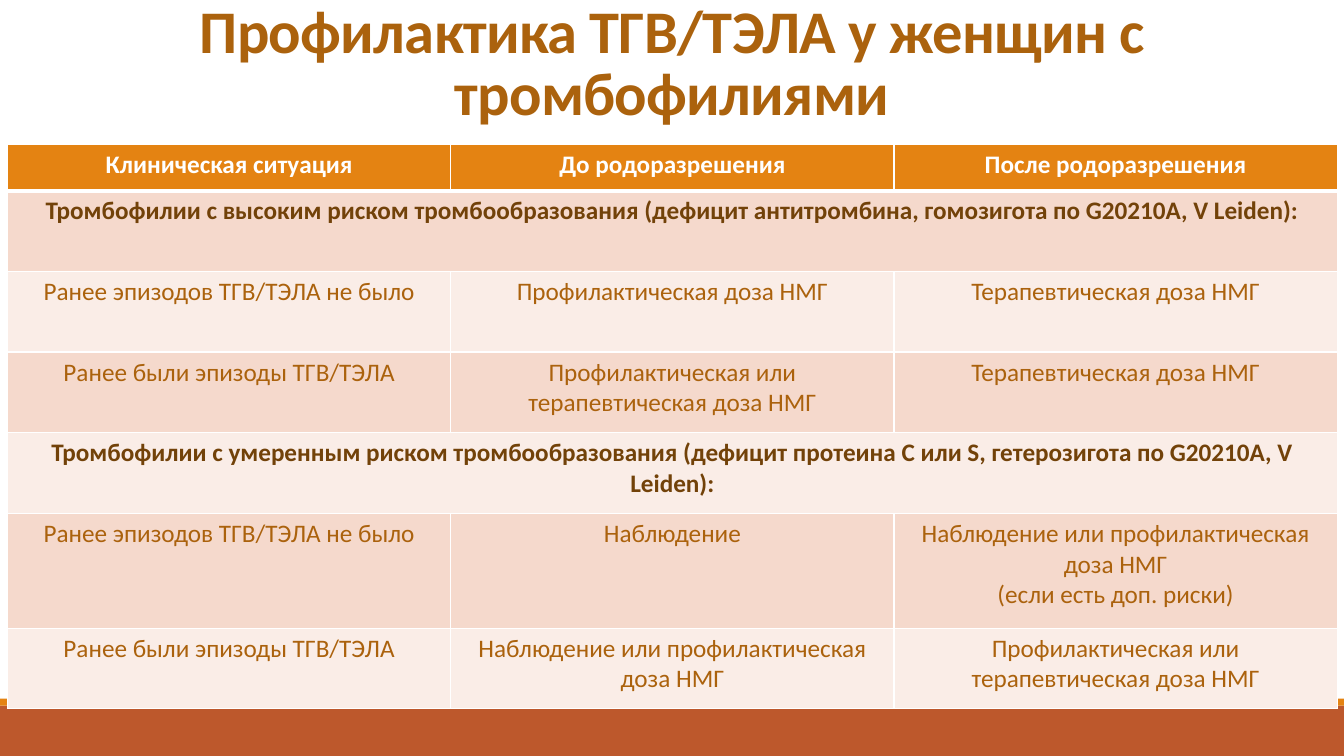
from lxml.etree import SubElement
from pptx import Presentation
from pptx.dml.color import RGBColor
from pptx.enum.shapes import MSO_SHAPE as Shape
from pptx.enum.text import MSO_ANCHOR as Anchor, PP_ALIGN as Align
from pptx.oxml.ns import qn
from pptx.util import Pt

COLORS = {
    "header": "E48312",
    "footer": "BD582C",
    "text": "AB620D",
    "group": "724209",
    "white": "FFFFFF",
    "dark_band": "F5D9CC",
    "light_band": "FAEDE7",
}
FONT = "Calibri"
SLIDE_WIDTH, SLIDE_HEIGHT = 960, 540
COLUMN_WIDTH = 316.6
ROW_HEIGHTS = [33, 57.6, 57.6, 57.6, 57.6, 82, 57.6]
NO_EPISODES = "Ранее эпизодов ТГВ/ТЭЛА не было"
HAD_EPISODES = "Ранее были эпизоды ТГВ/ТЭЛА"
THERAPEUTIC = "Терапевтическая доза НМГ"
EITHER_DOSE = "Профилактическая или терапевтическая доза НМГ"
WATCH_OR_PREVENT = "Наблюдение или профилактическая доза НМГ"
REGIMENS = [
    ["Клиническая ситуация", "До родоразрешения", "После родоразрешения"],
    ["Тромбофилии с высоким риском тромбообразования "
     "(дефицит антитромбина, гомозигота по G20210A, V Leiden):"],
    [NO_EPISODES, "Профилактическая доза НМГ", THERAPEUTIC],
    [HAD_EPISODES, EITHER_DOSE, THERAPEUTIC],
    ["Тромбофилии с умеренным риском тромбообразования "
     "(дефицит протеина С или S, гетерозигота по G20210A, V Leiden):"],
    [NO_EPISODES, "Наблюдение", WATCH_OR_PREVENT + "\n(если есть доп. риски)"],
    [HAD_EPISODES, WATCH_OR_PREVENT, EITHER_DOSE],
]


def rgb(name):
    return RGBColor.from_string(COLORS[name])


def format_text(frame, size, color, bold):
    for paragraph in frame.paragraphs:
        paragraph.alignment = Align.CENTER
        for run in paragraph.runs:
            run.font.name = FONT
            run.font.size = Pt(size)
            run.font.bold = bold
            run.font.color.rgb = rgb(color)


def add_band(slide, top, height, color):
    band = slide.shapes.add_shape(
        Shape.RECTANGLE, 0, Pt(top), Pt(SLIDE_WIDTH), Pt(height))
    band.shadow.inherit = False
    band.fill.solid()
    band.fill.fore_color.rgb = rgb(color)
    band.line.fill.background()


def add_title(slide, text):
    title = slide.shapes.add_textbox(0, Pt(-9.4), Pt(SLIDE_WIDTH), Pt(104.4))
    frame = title.text_frame
    frame.word_wrap = True
    frame.vertical_anchor = Anchor.BOTTOM
    frame.text = text
    format_text(frame, 43.2, "text", True)
    heading = frame.paragraphs[0]
    heading.line_spacing = 0.85
    heading.runs[0]._r.get_or_add_rPr().set("spc", "-50")


def set_borders(cell, top, bottom):
    properties = cell._tc.get_or_add_tcPr()
    for side, width in (("L", 1), ("R", 1), ("T", top), ("B", bottom)):
        border = SubElement(properties, qn(f"a:ln{side}"), w=str(Pt(width)))
        fill = SubElement(border, qn("a:solidFill"))
        SubElement(fill, qn("a:srgbClr"), val=COLORS["white"])


def style_cell(cell, row, is_group):
    set_borders(cell, 3 if row == 1 else 1, 3 if row == 0 else 1)
    is_header = row == 0
    band = "dark_band" if row % 2 else "light_band"
    cell.fill.solid()
    cell.fill.fore_color.rgb = rgb("header" if is_header else band)
    color = "white" if is_header else "group" if is_group else "text"
    format_text(cell.text_frame, 18, color, is_header or is_group)


def add_regimen_table(slide):
    columns = len(REGIMENS[0])
    table = slide.shapes.add_table(
        len(REGIMENS), columns, Pt(5.4), Pt(103.3),
        Pt(COLUMN_WIDTH * columns), Pt(sum(ROW_HEIGHTS))).table
    for column in table.columns:
        column.width = Pt(COLUMN_WIDTH)
    for row, (texts, height) in enumerate(zip(REGIMENS, ROW_HEIGHTS)):
        table.rows[row].height = Pt(height)
        is_group = len(texts) == 1
        if is_group:
            table.cell(row, 0).merge(table.cell(row, columns - 1))
        for column, text in enumerate(texts):
            table.cell(row, column).text_frame.text = text
        for column in range(columns):
            style_cell(table.cell(row, column), row, is_group)


def main():
    deck = Presentation()
    deck.slide_width, deck.slide_height = Pt(SLIDE_WIDTH), Pt(SLIDE_HEIGHT)
    slide = deck.slides.add_slide(deck.slide_layouts[6])
    add_band(slide, 504, 36, "footer")
    add_band(slide, 499, 5, "header")
    add_title(slide, "Профилактика ТГВ/ТЭЛА у женщин с тромбофилиями")
    add_regimen_table(slide)
    deck.save("out.pptx")


if __name__ == "__main__":
    main()
